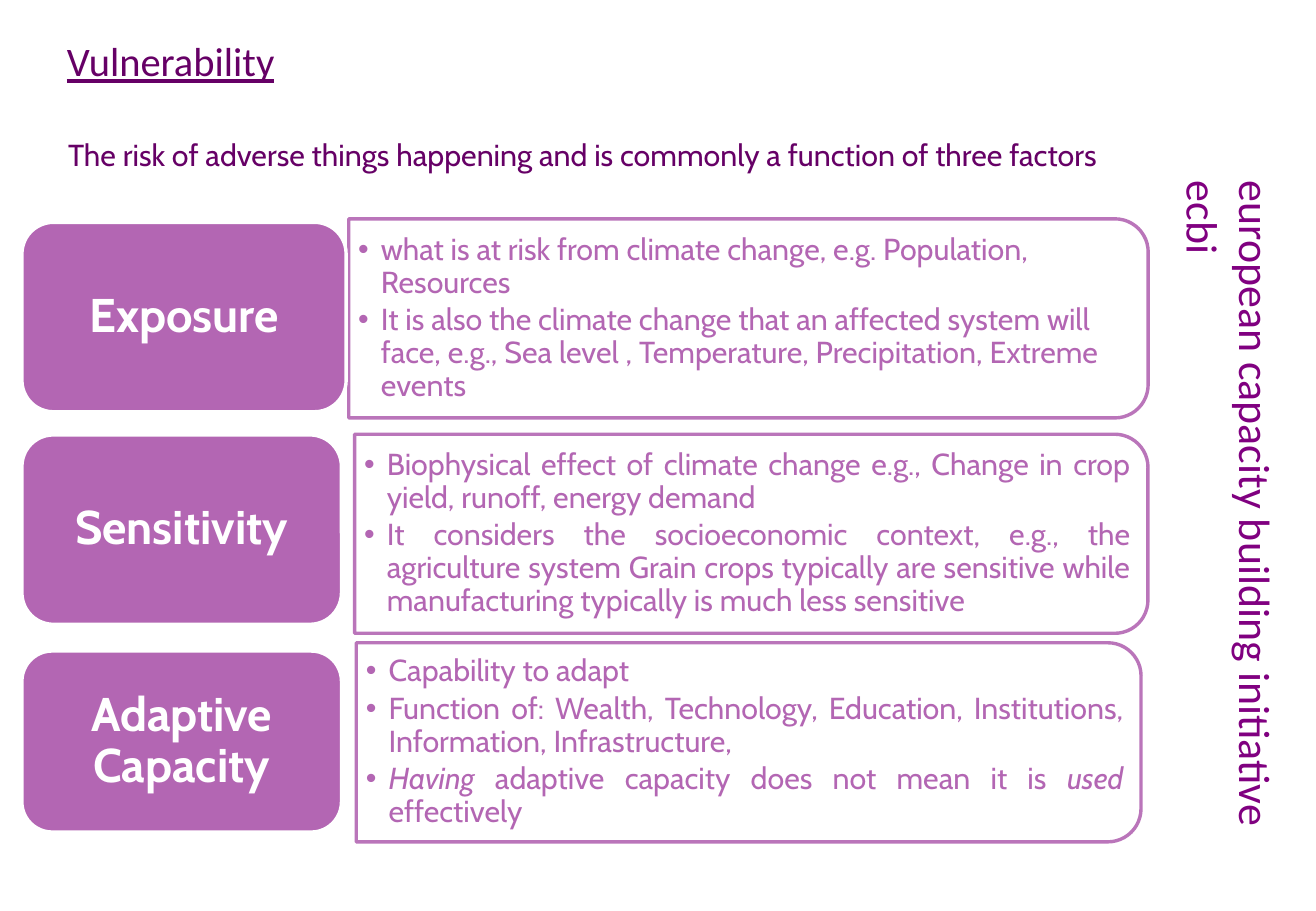
import pptx
import pptx.util
import pptx.dml.color
import pptx.enum.shapes
import pptx.enum.text
import pptx.oxml.ns
from lxml import etree

Pt = pptx.util.Pt
ALIGN = pptx.enum.text.PP_ALIGN
ANCHOR = pptx.enum.text.MSO_ANCHOR
SHAPE = pptx.enum.shapes.MSO_SHAPE
qn = pptx.oxml.ns.qn

COLORS = {"dark": "660066", "side": "800080", "mid": "B366B3", "white": "FFFFFF"}

# Text formats: font values, with the colour kept under its own key
HEAD = {"name": "Calibri", "size": Pt(24), "underline": True, "bold": False}
LEAD = {"name": "Cabin", "size": Pt(18), "bold": False}
ITEM = {"name": "Cabin", "size": Pt(18), "bold": False}
CARD = {"name": "Cabin", "size": Pt(28), "bold": True}
SIDE = {"name": "Calibri", "size": Pt(26)}

# One row per factor: card and panel as left, top, width, height
ROWS = [
    {
        "name": "Exposure", "align": ALIGN.LEFT,
        "card": (13, 131.8, 192.2, 112.3), "panel": (206.7, 129.7, 473.8, 118),
        "items": [
            ["what is at risk from climate change, e.g. Population, Resources"],
            ["It is also the climate change that an affected system will face, "
             "e.g., Sea level , Temperature, Precipitation, Extreme events"],
        ],
    },
    {
        "name": "Sensitivity", "align": ALIGN.JUSTIFY,
        "card": (13, 257.8, 189.4, 112.3), "panel": (210.2, 257.4, 470.2, 118),
        "items": [
            ["Biophysical effect of climate change e.g., Change in crop yield, "
             "runoff, energy demand"],
            ["It considers the socioeconomic context, e.g., the agriculture "
             "system Grain crops typically are sensitive while manufacturing "
             "typically is much less sensitive"],
        ],
    },
    {
        "name": "Adaptive Capacity", "align": ALIGN.JUSTIFY,
        "card": (13, 385.9, 189.4, 107.3), "panel": (211.2, 381, 465.1, 118),
        # Every other run is italic, starting with the first
        "items": [
            ["Capability to adapt"],
            ["Function of: Wealth, Technology, Education, Institutions, "
             "Information, Infrastructure, "],
            ["Having ", "adaptive capacity does not mean it is ", "used ",
             "effectively"],
        ],
    },
]


def rgb(key):
    return pptx.dml.color.RGBColor.from_string(COLORS[key])


def style(font, form, color):
    for key, value in form.items():
        setattr(font, key, value)
    font.color.rgb = rgb(color)


def place(shape, box):
    for key, value in zip(("left", "top", "width", "height"), box):
        setattr(shape, key, Pt(value))


def setup(frame, anchor, side=7.2, edge=3.6):
    form = {
        "word_wrap": True, "auto_size": pptx.enum.text.MSO_AUTO_SIZE.NONE,
        "vertical_anchor": anchor,
        "margin_left": Pt(side), "margin_right": Pt(side),
        "margin_top": Pt(edge), "margin_bottom": Pt(edge),
    }
    for key, value in form.items():
        setattr(frame, key, value)


def bullet(para, char, indent):
    props = para._p.get_or_add_pPr()
    props.set("marL", str(Pt(indent)))
    props.set("indent", str(-Pt(indent)))
    if char:
        etree.SubElement(props, qn("a:buChar")).set("char", char)
    else:
        etree.SubElement(props, qn("a:buNone"))


def add_line(holder, box, text, form, align):
    """Fill a placeholder with one plain line."""
    place(holder, box)
    setup(holder.text_frame, ANCHOR.TOP)
    para = holder.text_frame.paragraphs[0]
    bullet(para, None, 0)
    para.alignment = align
    para.space_before = Pt(0)
    run = para.add_run()
    run.text = text
    style(run.font, form, "dark")


def add_list(holder, row):
    """Fill a body placeholder with the bullets of one factor."""
    left, top, width, height = row["panel"]
    place(holder, (left + 0.6, top + 5.7, width - 6, height - 11.4))
    frame = holder.text_frame
    setup(frame, ANCHOR.MIDDLE, 5, 2.9)
    for num, parts in enumerate(row["items"]):
        para = frame.add_paragraph() if num else frame.paragraphs[0]
        para.level = 1
        bullet(para, "•", 13.5)
        para.alignment = row["align"]
        para.line_spacing = 0.9
        para.space_before = Pt(0)
        para.space_after = Pt(2.7)
        style(para.font, ITEM, "mid")
        for pos, text in enumerate(parts):
            run = para.add_run()
            run.text = text
            style(run.font, ITEM, "mid")
            run.font.italic = len(parts) > 1 and pos % 2 == 0


def add_panel(slide, box):
    """Draw an outline with rounded right corners."""
    left, top, width, height = box
    shift = (width - height) / 2
    turned = (left + shift, top - shift, height, width)
    shape = slide.shapes.add_shape(
        SHAPE.ROUND_2_SAME_RECTANGLE, *[Pt(v) for v in turned])
    shape.rotation = 90
    shape.shadow.inherit = False
    shape.fill.background()
    shape.line.color.rgb = rgb("mid")
    shape.line.width = Pt(2)
    tint = shape.line._ln.find(".//" + qn("a:srgbClr"))
    etree.SubElement(tint, qn("a:alpha")).set("val", "90000")


def add_card(slide, box, text):
    """Draw a filled card with a centred name."""
    shape = slide.shapes.add_shape(
        SHAPE.ROUNDED_RECTANGLE, *[Pt(v) for v in box])
    shape.shadow.inherit = False
    shape.fill.solid()
    shape.fill.fore_color.rgb = rgb("mid")
    shape.line.color.rgb = rgb("white")
    shape.line.width = Pt(2)
    setup(shape.text_frame, ANCHOR.MIDDLE, 14, 10)
    para = shape.text_frame.paragraphs[0]
    para.alignment = ALIGN.CENTER
    para.line_spacing = 0.9
    run = para.add_run()
    run.text = text
    style(run.font, CARD, "white")


def add_side(slide, box, text):
    """Write a label that runs down the slide."""
    shape = slide.shapes.add_textbox(*[Pt(v) for v in box])
    setup(shape.text_frame, ANCHOR.TOP)
    shape.text_frame._txBody.bodyPr.set("vert", "eaVert")
    run = shape.text_frame.paragraphs[0].add_run()
    run.text = text
    style(run.font, SIDE, "side")


def main():
    deck = pptx.Presentation()
    deck.slide_width, deck.slide_height = Pt(780), Pt(540)
    # The comparison layout has a title and four bodies
    slide = deck.slides.add_slide(deck.slide_layouts[4])
    title, *lists, lead = slide.placeholders

    # Heading and lead
    add_line(title, (32.4, 18, 575.3, 36), "Vulnerability", HEAD, ALIGN.LEFT)
    add_line(lead, (33.1, 77, 626.4, 28.8),
             "The risk of adverse things happening and is commonly "
             "a function of three factors", LEAD, ALIGN.JUSTIFY)

    # Factors
    for holder, row in zip(lists, ROWS):
        add_panel(slide, row["panel"])
        add_card(slide, row["card"], row["name"])
        add_list(holder, row)

    # Side label
    add_side(slide, (710, 100, 54, 431.3),
             "european capacity building initiative ecbi")
    deck.save("out.pptx")


if __name__ == "__main__":
    main()
